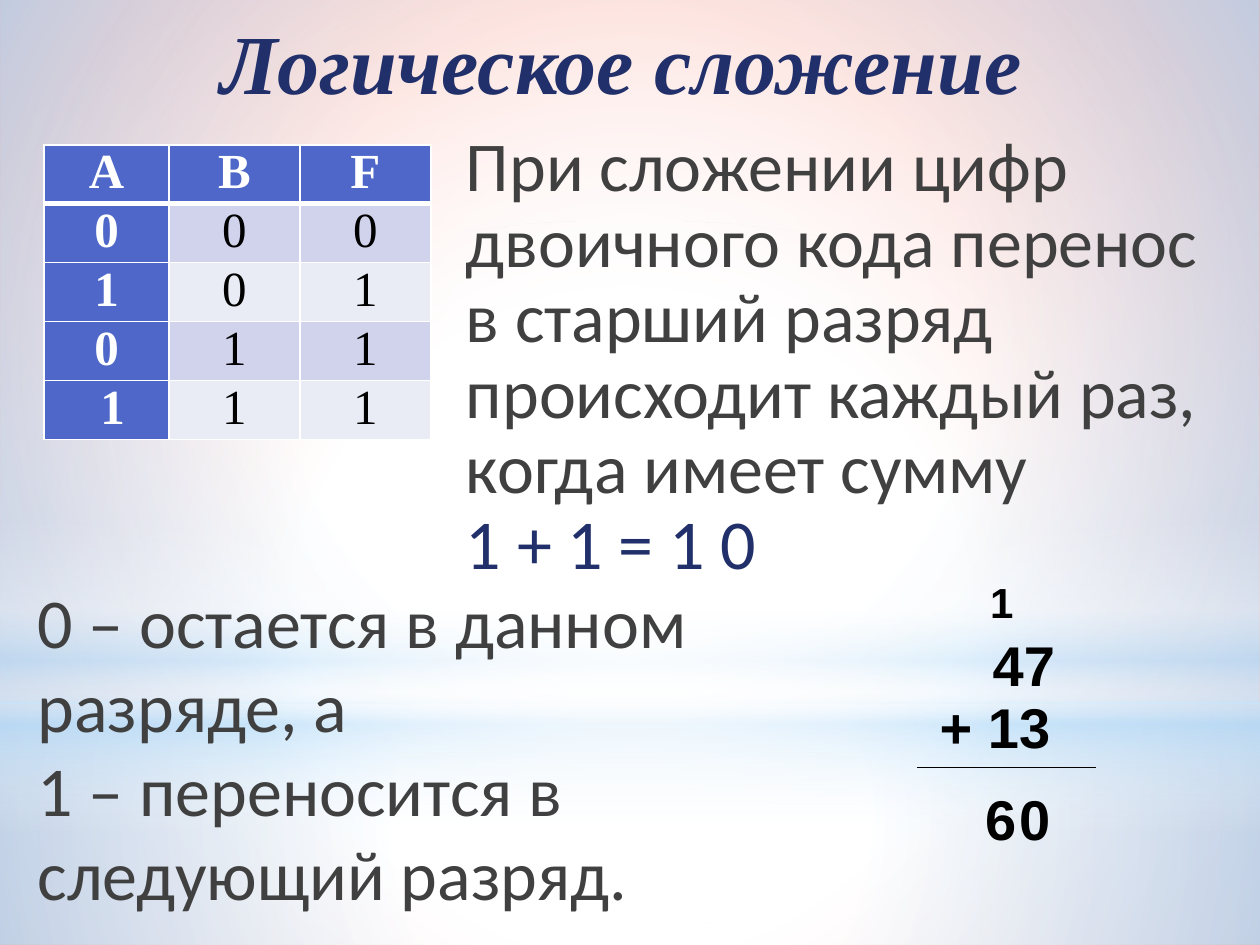
"""Build the slide on logical addition: truth table, rule and worked sum."""
from lxml import etree
from pptx import Presentation, util as u
from pptx.dml.color import RGBColor
from pptx.enum import shapes, text
from pptx.oxml import ns, parse_xml

INK, NAVY, BLACK, WHITE = "404040", "21306A", "000000", "FFFFFF"
BLUE, BANDS = "4E67C8", ("E9EBF5", "D0D3EB")
MID = (50, 50, 50, 50)
HAZE = [
    ("RECTANGLE", (0, 5.58, 10, 1.92), [(0, WHITE, 91), (37, WHITE, 76), (100, "B4DCFA", 79)], MID),
    ("RECTANGLE", (0, 0, 10, 5.58), [(0, WHITE, 89), (48, WHITE, 62), (100, "B4DCFA", 79)], MID),
    ("RECTANGLE", (0, 4.12, 10, 2.5), [(0, WHITE, 0), (29, WHITE, 30), (45, "B4DCFA", 40),
                                       (55, WHITE, 26), (65, "B4DCFA", 60), (100, WHITE, 0)], None),
    ("OVAL", (0, 1.75, 10, 5.58), [(0, WHITE, 100), (56, WHITE, 0)], MID),
]
TITLE = dict(name="Times New Roman", size=u.Pt(48), bold=True, italic=True)
BODY = dict(name="Calibri", size=u.Pt(40))
SUM = dict(name="Arial", size=u.Pt(32), bold=True)
CARRY = {**SUM, "size": u.Pt(24)}
HEAD = dict(name="Times New Roman", size=u.Pt(28), bold=True)
CELL = {**HEAD, "bold": False}
TEXTS = [
    ((0.51, 0, 8.84, 0.97), TITLE, [("Логическое сложение", NAVY)],
     dict(alignment=text.PP_ALIGN.CENTER)),
    ((3.6, 0.99, 6.13, 3.78), BODY,
     [("При сложении цифр двоичного кода перенос в старший разряд происходит "
       "каждый раз, когда имеет сумму", INK), ("1 + 1 = 1 0", NAVY)], dict(line_spacing=0.9)),
    ((7.36, 5.19, 1.89, 0.9), SUM, [("47", BLACK), ("+ 13", BLACK)], dict(line_spacing=0.5)),
    ((7.99, 6.18, 0.55, 0.63), SUM, [("0", BLACK)], {}),
    ((7.72, 6.18, 0.55, 0.63), SUM, [("6", BLACK)], {}),
    ((7.76, 4.53, 0.47, 0.5), CARRY, [("1", BLACK)], {}),
    ((0.2, 4.54, 6.38, 3.1), BODY,
     [("0 – остается в данном разряде, а", INK), ("1 – переносится в следующий разряд.", INK)], {}),
]
ROWS = [("А", "В", "F"), ("0", "0", "0"), ("1", "0", "1"), ("0", "1", "1"), (" 1", "1", "1")]
COLS = (0.99, 1.04, 1.04)


def rgb(code):
    """Turn a hex string into a colour."""
    return RGBColor.from_string(code)


def place(box):
    """Convert a box in inches to lengths."""
    return [u.Inches(n) for n in box]


def apply(item, style):
    """Set each attribute of a format."""
    for key, val in style.items():
        setattr(item, key, val)


def blend(root, stops, focus):
    """Swap the solid fill below root for a gradient."""
    marks = "".join(f'<a:gs pos="{pos * 1000}"><a:srgbClr val="{code}">'
                    f'<a:alpha val="{alpha * 1000}"/></a:srgbClr></a:gs>'
                    for pos, code, alpha in stops)
    if focus:
        sides = " ".join(f'{s}="{n * 1000}"' for s, n in zip("ltrb", focus))
        way = f'<a:path path="circle"><a:fillToRect {sides}/></a:path>'
    else:
        way = '<a:lin ang="5400000" scaled="0"/>'
    old = root.find(".//" + ns.qn("a:solidFill"))
    new = parse_xml(f'<a:gradFill {ns.nsdecls("a")} rotWithShape="1">'
                    f'<a:gsLst>{marks}</a:gsLst>{way}</a:gradFill>')
    old.getparent().replace(old, new)


def edge(cell, row):
    """Draw white borders, thick below the header."""
    wide = {"T": 3 if row == 1 else 1, "B": 3 if row == 0 else 1}
    for spot, side in enumerate("LRTB"):
        line = parse_xml(f'<a:ln{side} {ns.nsdecls("a")} w="{wide.get(side, 1) * 12700}">'
                         f'<a:solidFill><a:srgbClr val="{WHITE}"/></a:solidFill></a:ln{side}>')
        cell._tc.get_or_add_tcPr().insert(spot, line)


def write(par, words, style, code):
    """Add one run in a given style and colour."""
    run = par.add_run()
    run.text = words
    apply(run.font, style)
    run.font.color.rgb = rgb(code)


def backdrop(slide):
    """Paint the background and its haze."""
    slide.background.fill.solid()
    slide.background.fill.fore_color.rgb = rgb(WHITE)
    blend(slide.element, [(0, WHITE, 100), (42, WHITE, 100), (100, "F78D7C", 100)], (24, 44, 24, 12))
    for kind, box, stops, focus in HAZE:
        shape = slide.shapes.add_shape(getattr(shapes.MSO_SHAPE, kind), *place(box))
        shape.shadow.inherit = False
        shape.fill.solid()
        shape.fill.fore_color.rgb = rgb(WHITE)
        shape.line.fill.background()
        blend(shape.element, stops, focus)


def texts(slide):
    """Place all text boxes."""
    for box, style, lines, form in TEXTS:
        frame = slide.shapes.add_textbox(*place(box)).text_frame
        frame.word_wrap = True
        if style is TITLE:
            frame.vertical_anchor = text.MSO_ANCHOR.MIDDLE
        for num, (words, code) in enumerate(lines):
            par = frame.add_paragraph() if num else frame.paragraphs[0]
            apply(par, form)
            if num and style is SUM:
                par.space_before = u.Pt(16)
            if words == "47":
                par._p.get_or_add_pPr().set("indent", str(u.Inches(0.42)))
            write(par, words, style, code)


def grid(slide):
    """Build the truth table."""
    box = place((0.35, 1.15, sum(COLS), 2.33))
    table = slide.shapes.add_table(len(ROWS), len(COLS), *box).table
    for col, wide in zip(table.columns, COLS):
        col.width = u.Inches(wide)
    pad = dict(margin_left=u.Inches(0.07), margin_right=u.Inches(0.07), margin_top=0, margin_bottom=0)
    for r, row in enumerate(ROWS):
        for c, words in enumerate(row):
            cell = table.cell(r, c)
            head = r == 0 or c == 0
            apply(cell, pad)
            cell.fill.solid()
            cell.fill.fore_color.rgb = rgb(BLUE if head else BANDS[r % 2])
            edge(cell, r)
            par = cell.text_frame.paragraphs[0]
            par.alignment = text.PP_ALIGN.CENTER
            write(par, words, HEAD if head else CELL, WHITE if head else BLACK)


def rule(slide):
    """Draw the line above the total."""
    line = slide.shapes.add_connector(shapes.MSO_CONNECTOR.STRAIGHT, *place((7.28, 6.09, 8.7, 6.09)))
    line.line.color.rgb = rgb(BLACK)
    line.line.width = u.Pt(0.75)
    etree.SubElement(line.element.spPr, ns.qn("a:effectLst"))


def main():
    """Assemble and save the slide."""
    deck = Presentation()
    deck.slide_width, deck.slide_height = place((10, 7.5))
    slide = deck.slides.add_slide(deck.slide_layouts[6])
    for step in (backdrop, texts, rule, grid):
        step(slide)
    deck.save("out.pptx")


if __name__ == "__main__":
    main()
